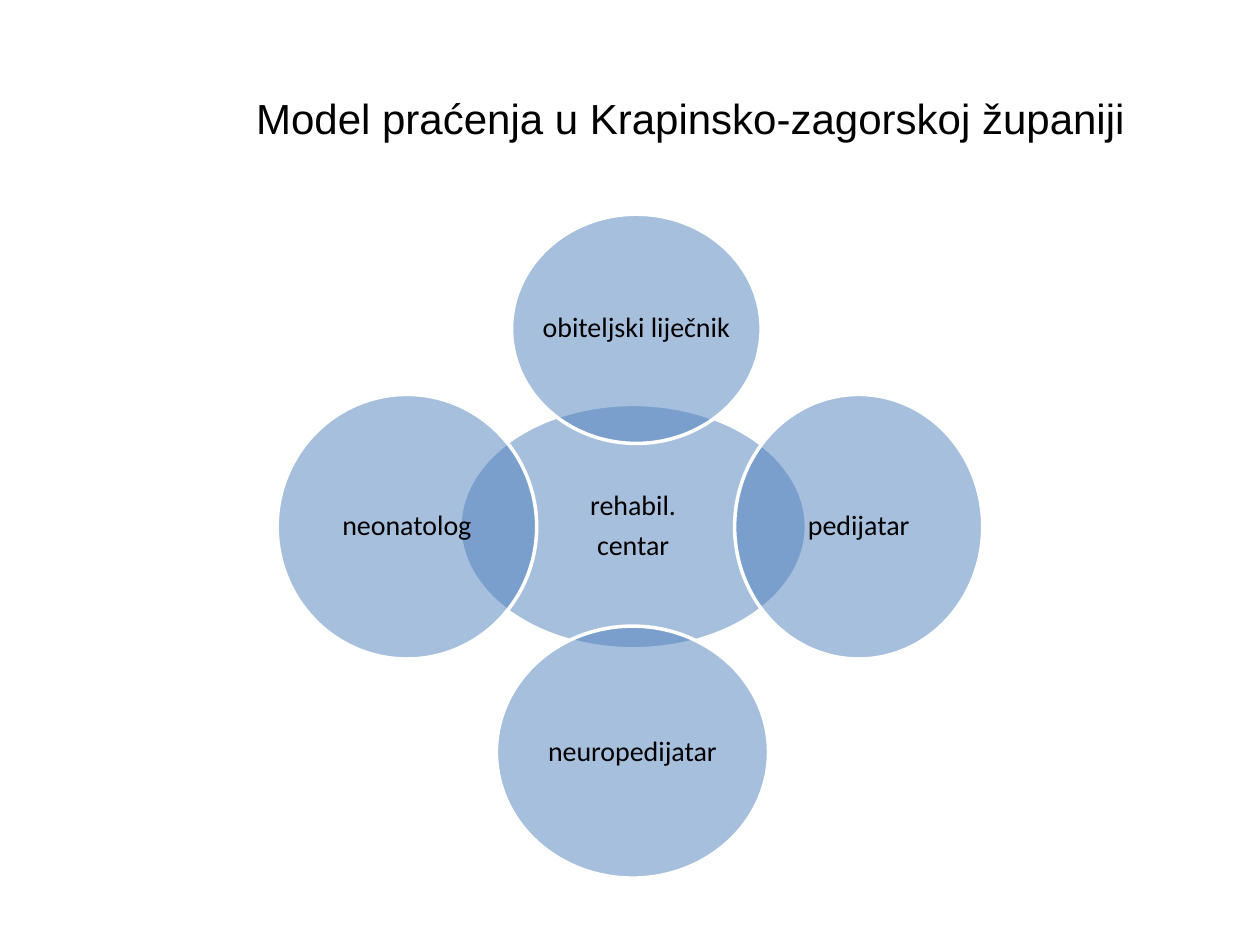
from dataclasses import dataclass

from lxml.etree import SubElement
from pptx import Presentation
from pptx.dml.color import RGBColor
from pptx.enum.shapes import MSO_SHAPE as Shape
from pptx.enum.text import MSO_ANCHOR as Anchor, PP_ALIGN as Align
from pptx.oxml.ns import qn
from pptx.slide import Slide
from pptx.text.text import TextFrame
from pptx.util import Pt

COLORS = {"circle": "4F81BD", "outline": "FFFFFF", "text": "000000"}
OPACITY = 50


@dataclass
class Circle:
    label: str
    left: float
    top: float
    width: float
    height: float


CIRCLES = [
    Circle("rehabil.\ncentar", 262.8, 231.1, 198, 139.7),
    Circle("obiteljski liječnik", 292.3, 122.4, 142.6, 131),
    Circle("pedijatar", 419.8, 225.4, 141.8, 151.2),
    Circle("neuropedijatar", 283.7, 357.8, 155.5, 144),
    Circle("neonatolog", 158.4, 225.4, 148.3, 151.2),
]


def write_text(frame: TextFrame, text: str, *, font: str, size: float,
               inset: float, wrap: bool, line_spacing: float = 1,
               space_after: float = 0) -> None:
    """Fill the frame with centred text, one paragraph per line."""
    frame.text = text
    frame.word_wrap = wrap
    frame.vertical_anchor = Anchor.MIDDLE
    frame.margin_left = frame.margin_right = Pt(inset)
    frame.margin_top = frame.margin_bottom = Pt(inset)
    for paragraph in frame.paragraphs:
        paragraph.alignment = Align.CENTER
        paragraph.line_spacing = line_spacing
        paragraph.space_after = Pt(space_after)
        paragraph.font.name = font
        paragraph.font.size = Pt(size)
        paragraph.font.color.rgb = RGBColor.from_string(COLORS["text"])


def draw_circle(slide: Slide, circle: Circle) -> None:
    oval = slide.shapes.add_shape(Shape.OVAL, Pt(circle.left), Pt(circle.top),
                                  Pt(circle.width), Pt(circle.height))
    oval.shadow.inherit = False
    oval.fill.solid()
    oval.fill.fore_color.rgb = RGBColor.from_string(COLORS["circle"])
    fill_color = oval.fill._xPr.find(qn("a:solidFill"))[0]
    SubElement(fill_color, qn("a:alpha"), val=str(OPACITY * 1000))
    oval.line.color.rgb = RGBColor.from_string(COLORS["outline"])
    oval.line.width = Pt(2)
    write_text(oval.text_frame, circle.label, font="Calibri", size=16,
               inset=1.4, wrap=False, line_spacing=0.9, space_after=5.6)


def main() -> None:
    deck = Presentation()
    deck.slide_width, deck.slide_height = Pt(720), Pt(540)
    slide = deck.slides.add_slide(deck.slide_layouts[6])
    title = slide.shapes.add_textbox(Pt(70.5), Pt(22.5), Pt(648), Pt(90))
    write_text(title.text_frame, "Model praćenja u Krapinsko-zagorskoj županiji",
               font="Arial", size=24, inset=3.6, wrap=True)
    for circle in CIRCLES:
        draw_circle(slide, circle)
    deck.save("out.pptx")


if __name__ == "__main__":
    main()
